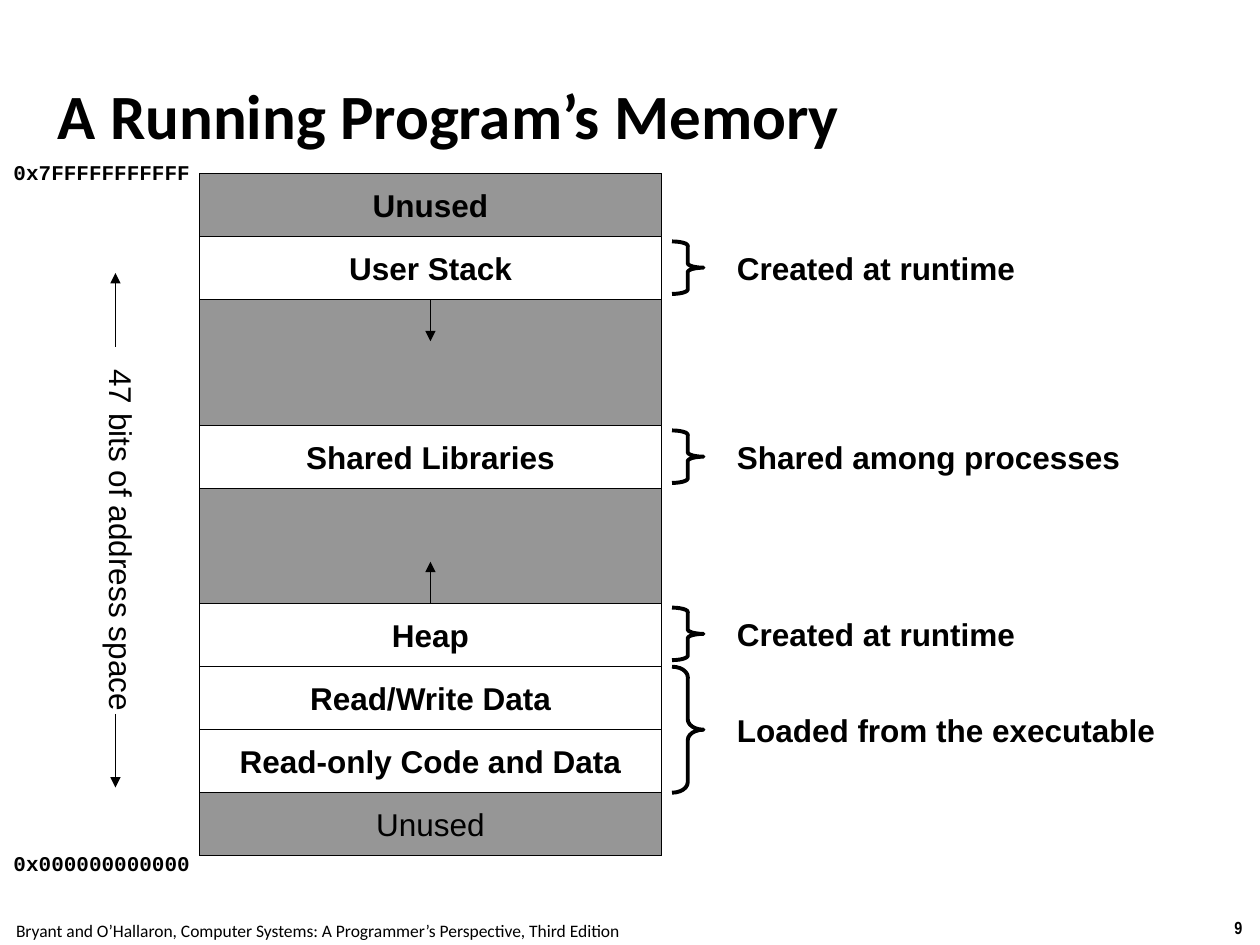
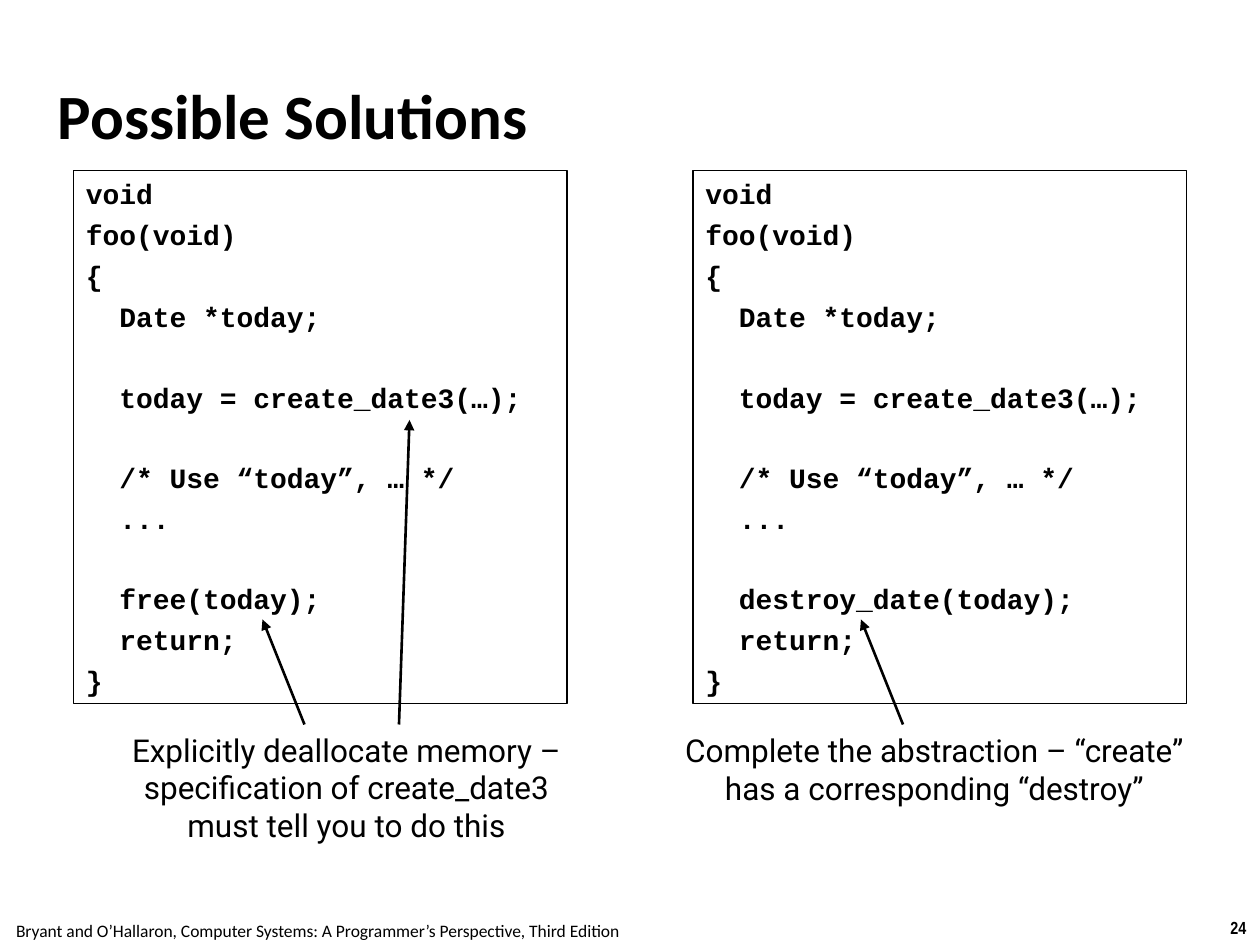
from pptx import Presentation
from pptx.dml.color import RGBColor
from pptx.enum.shapes import MSO_CONNECTOR, MSO_SHAPE
from pptx.enum.text import MSO_ANCHOR, MSO_AUTO_SIZE, PP_ALIGN
from pptx.oxml.ns import qn
from pptx.util import Emu, Pt
from lxml import etree

PX = 9525
COLORS = {"ink": "000000", "paper": "FFFFFF", "unused": "969696"}
INK = RGBColor.from_string(COLORS["ink"])
LEFT, CENTER = PP_ALIGN.LEFT, PP_ALIGN.CENTER
FORMATS = {
    "title": {"name": "Calibri", "size": Pt(36), "bold": True},
    "footer": {"name": "Calibri", "size": Pt(10), "bold": False},
    "number": {"name": "Arial Narrow", "size": Pt(10), "bold": True},
    "label": {"name": "Arial", "size": Pt(18), "bold": True},
    "plain": {"name": "Arial", "size": Pt(18), "bold": False},
    "address": {"name": "Courier New", "size": Pt(12), "bold": True},
    "code": {"name": "Courier New", "size": Pt(16), "bold": True},
    "caption": {"name": "Roboto", "size": Pt(18), "bold": False},
}
FOOTER = "Bryant and O’Hallaron, Computer Systems: A Programmer’s Perspective, Third Edition"


def write(box, lines, style, align=CENTER, anchor=MSO_ANCHOR.TOP, wrap=False):
    frame = box.text_frame
    frame.auto_size = MSO_AUTO_SIZE.NONE
    frame.word_wrap = wrap
    frame.vertical_anchor = anchor
    frame.text = "\n".join(lines)
    for para in frame.paragraphs:
        para.alignment = align
        for span in para.runs:
            span.font.color.rgb = INK
            for key, value in FORMATS[style].items():
                setattr(span.font, key, value)
    return frame


def draw_arrow(page, start, end, width=0.75):
    arrow = page.shapes.add_connector(MSO_CONNECTOR.STRAIGHT, *[Emu(v * PX) for v in start + end])
    arrow.line.color.rgb = INK
    arrow.line.width = Pt(width)
    etree.SubElement(arrow.line._get_or_add_ln(), qn("a:tailEnd"), type="triangle")
    etree.SubElement(arrow._element.spPr, qn("a:effectLst"))
    return arrow


deck = Presentation()
deck.slide_width, deck.slide_height = Emu(960 * PX), Emu(720 * PX)

pages = []
for heading, number in (("A Running Program’s Memory", "9"), ("Possible Solutions", "24")):
    page = deck.slides.add_slide(deck.slide_layouts[5])
    title = page.shapes.title
    title.left, title.top, title.width, title.height = [Emu(v * PX) for v in (40, 27, 880, 120)]
    frame = write(title, [heading], "title", LEFT, MSO_ANCHOR.MIDDLE, True)
    for side in ("left", "top", "right", "bottom"):
        setattr(frame, f"margin_{side}", Emu(4 * PX))
    for text, style, bounds in (
        (number, "number", (927, 694, 33, 26)),
        (FOOTER, "footer", (-2, 696, 488, 26)),
    ):
        box = page.shapes.add_textbox(*[Emu(v * PX) for v in bounds])
        write(box, [text], style)
    pages.append(page)

memory, solutions = pages

ROW = 48
MAP_LEFT, MAP_TOP, MAP_WIDTH, MAP_HEIGHT = 152, 132, 352, 520
MIDDLE = MAP_LEFT + MAP_WIDTH // 2
regions = [
    ("", MAP_TOP, MAP_HEIGHT, "unused", "plain"),
    ("Unused", MAP_TOP, ROW, "unused", "label"),
    ("User Stack", 180, ROW, "paper", "label"),
    ("Shared Libraries", 324, ROW, "paper", "label"),
    ("Heap", 460, ROW, "paper", "label"),
    ("Read/Write Data", 508, ROW, "paper", "label"),
    ("Read-only Code and Data", 556, ROW, "paper", "label"),
    ("Unused", 604, ROW, "unused", "plain"),
]
blocks = {}
for name, top, height, fill, style in regions:
    bounds = (MAP_LEFT, top, MAP_WIDTH, height)
    block = memory.shapes.add_shape(MSO_SHAPE.RECTANGLE, *[Emu(v * PX) for v in bounds])
    block.shadow.inherit = False
    block.fill.solid()
    block.fill.fore_color.rgb = RGBColor.from_string(COLORS[fill])
    block.line.color.rgb = INK
    block.line.width = Pt(0.75)
    if name:
        write(block, [name], style, anchor=MSO_ANCHOR.MIDDLE)
    blocks[name] = block

heap_growth = draw_arrow(memory, (MIDDLE, 460), (MIDDLE, 428))
heap_growth.begin_connect(blocks["Heap"], 0)
stack_growth = draw_arrow(memory, (MIDDLE, 228), (MIDDLE, 260))
stack_growth.begin_connect(blocks["User Stack"], 2)

for address, top in (("0x7FFFFFFFFFFF", 117), ("0x000000000000", 643)):
    box = memory.shapes.add_textbox(*[Emu(v * PX) for v in (0, top, 155, 29)])
    write(box, [address], "address")

for note, top, height, bend in (
    ("Loaded from the executable", 508, 96, 0.33),
    ("Created at runtime", 463, 40, 0.14),
    ("Created at runtime", 184, 40, 0.14),
    ("Shared among processes", 328, 40, 0.14),
):
    bounds = (512, top, 24, height)
    brace = memory.shapes.add_shape(MSO_SHAPE.RIGHT_BRACE, *[Emu(v * PX) for v in bounds])
    brace.shadow.inherit = False
    brace.adjustments[0] = bend
    brace.fill.background()
    brace.line.color.rgb = INK
    brace.line.width = Pt(2.25)
    bounds = (552, top + (height - 38) // 2, 338, 38)
    box = memory.shapes.add_textbox(*[Emu(v * PX) for v in bounds])
    write(box, [note], "label", LEFT)

span_label = memory.shapes.add_textbox(*[Emu(v * PX) for v in (64, 272, 48, 270)])
frame = write(span_label, ["47 bits of address space"], "plain")
frame._txBody.bodyPr.set("vert", "eaVert")
for start, end in ((544, 600), (264, 208)):
    draw_arrow(memory, (88, start), (88, end))

LINE_GAP, BLANK_LINE = 4.25, 22.4
for left, release in ((56, "free(today);"), (528, "destroy_date(today);")):
    listing = solutions.shapes.add_shape(
        MSO_SHAPE.RECTANGLE, *[Emu(v * PX) for v in (left, 130, 376, 406)]
    )
    listing.shadow.inherit = False
    listing.fill.background()
    listing.line.color.rgb = INK
    listing.line.width = Pt(0.75)
    body = ["Date *today;", "today = create_date3(…);", "/* Use “today”, … */", "...", release, "return;"]
    section_starts = (body[1], body[2], release)
    frame = write(listing, ["void", "foo(void)", "{", *body, "}"], "code", LEFT, wrap=True)
    for para in frame.paragraphs:
        para.space_before = Pt(LINE_GAP + BLANK_LINE * (para.text in section_starts))
        if para.text in body:
            para._p.get_or_add_pPr().set("marL", str(Pt(19.2)))

for caption, bounds in (
    (
        "Explicitly deallocate memory – specification of create_date3 must tell you to do this",
        (88, 552, 352, 96),
    ),
    ("Complete the abstraction – “create” has a corresponding “destroy”", (512, 552, 400, 67)),
):
    box = solutions.shapes.add_textbox(*[Emu(v * PX) for v in bounds])
    write(box, [caption], "caption", wrap=True)

for start, end in (
    ((232, 552), (200, 472)),
    ((304, 552), (312, 320)),
    ((688, 552), (656, 472)),
):
    draw_arrow(solutions, start, end, 1.5)

deck.save("out.pptx")
